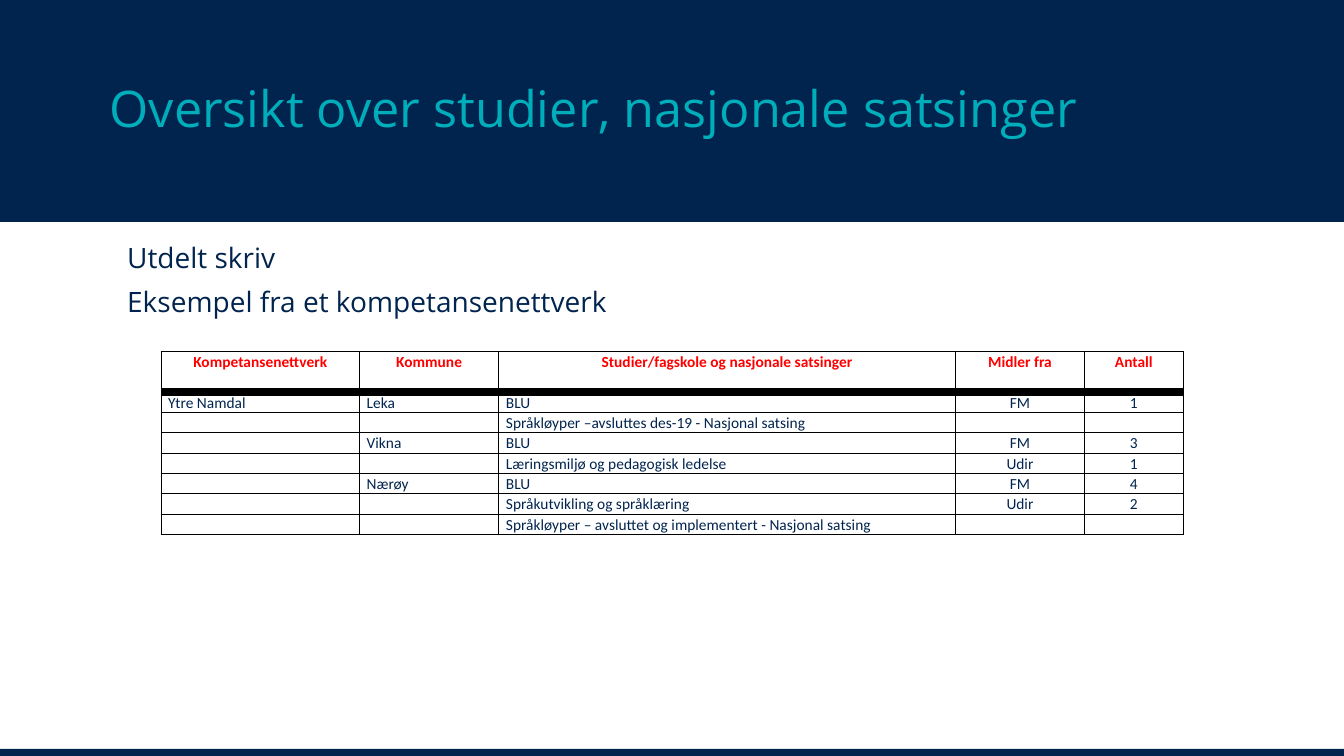
from lxml import etree
from pptx import Presentation
from pptx.dml.color import RGBColor
from pptx.enum.shapes import MSO_SHAPE
from pptx.enum.text import MSO_ANCHOR, MSO_AUTO_SIZE, PP_ALIGN
from pptx.oxml.ns import qn
from pptx.util import Cm, Pt

RECTANGLE = MSO_SHAPE.RECTANGLE
TOP, BOTTOM = MSO_ANCHOR.TOP, MSO_ANCHOR.BOTTOM
LEFT, CENTER = PP_ALIGN.LEFT, PP_ALIGN.CENTER
NO_AUTOFIT = MSO_AUTO_SIZE.NONE

NAVY = RGBColor(0x00, 0x24, 0x4E)
TEAL = RGBColor(0x00, 0xAD, 0xBA)
RED = RGBColor(0xFF, 0x00, 0x00)
BLACK = RGBColor(0x00, 0x00, 0x00)
SLIDE_FONT, TABLE_FONT = "Open Sans", "Calibri"

TITLE = "Oversikt over studier, nasjonale satsinger"
INTRO = ["Utdelt skriv", "Eksempel fra et kompetansenettverk"]
STUDIES = [
    ("Kompetansenettverk", "Kommune", "Studier/fagskole og nasjonale satsinger",
     "Midler fra", "Antall"),
    ("Ytre Namdal", "Leka", "BLU", "FM", "1"),
    ("", "", "Språkløyper –avsluttes des-19 - Nasjonal satsing", "", ""),
    ("", "Vikna", "BLU", "FM", "3"),
    ("", "", "Læringsmiljø og pedagogisk ledelse", "Udir", "1"),
    ("", "Nærøy", "BLU", "FM", "4"),
    ("", "", "Språkutvikling og språklæring", "Udir", "2"),
    ("", "", "Språkløyper – avsluttet og implementert - Nasjonal satsing", "", ""),
]
COLUMN_WIDTHS = [5, 3.51, 11.51, 3.25, 2.49]
CENTERED_COLUMNS = (3, 4)
HEADER_HEIGHT, ROW_HEIGHT = 1.02, 0.51
TABLE_TEXT_SIZE = 11
THIN, THICK = Pt(1), Pt(6)
SLIDE_WIDTH, SLIDE_HEIGHT = 33.87, 19.05
BANDS = [(0, 5.59), (18.87, 0.18)]  # top, height


def place(shape, left, top, width, height):
    shape.left, shape.top = Cm(left), Cm(top)
    shape.width, shape.height = Cm(width), Cm(height)


def style(paragraph, font_name, size, color, bold=False):
    for run in paragraph.runs:
        run.font.name = font_name
        run.font.size = Pt(size)
        run.font.color.rgb = color
        run.font.bold = bold


def add_band(slide, top, height):
    """Add a full-width navy band behind the text."""
    band = slide.shapes.add_shape(
        RECTANGLE, 0, Cm(top), Cm(SLIDE_WIDTH), Cm(height))
    band.shadow.inherit = False
    band.fill.solid()
    band.fill.fore_color.rgb = NAVY
    band.line.fill.background()
    band._element.getparent().insert(2, band._element)


def set_borders(cell, top, bottom):
    properties = cell._tc.get_or_add_tcPr()
    edges = {"a:lnL": THIN, "a:lnR": THIN, "a:lnT": top, "a:lnB": bottom}
    for position, (edge, width) in enumerate(edges.items()):
        line = etree.Element(qn(edge), w=str(width))
        fill = etree.SubElement(line, qn("a:solidFill"))
        etree.SubElement(fill, qn("a:srgbClr"), val=str(BLACK))
        properties.insert(position, line)


def fill_cell(cell, text, row, column):
    is_header = row == 0
    cell.margin_left = cell.margin_right = Cm(0.18)
    cell.margin_top = cell.margin_bottom = 0
    cell.vertical_anchor = TOP
    cell.fill.background()
    set_borders(cell, THICK if row == 1 else THIN, THICK if is_header else THIN)
    paragraph = cell.text_frame.paragraphs[0]
    paragraph.text = text
    paragraph.alignment = CENTER if is_header or column in CENTERED_COLUMNS else LEFT
    paragraph.line_spacing = 1.07
    style(paragraph, TABLE_FONT, TABLE_TEXT_SIZE, RED if is_header else NAVY, is_header)
    if not text:  # keeps an empty row as low as the others
        etree.SubElement(paragraph._p, qn("a:endParaRPr"), sz=str(TABLE_TEXT_SIZE * 100))


def add_studies(slide):
    graphic = slide.shapes.add_table(
        len(STUDIES), len(COLUMN_WIDTHS), Cm(4.06), Cm(8.86),
        Cm(sum(COLUMN_WIDTHS)), Cm(HEADER_HEIGHT + ROW_HEIGHT * (len(STUDIES) - 1)))
    studies = graphic.table
    studies.first_row = studies.horz_banding = False
    for column, width in zip(studies.columns, COLUMN_WIDTHS):
        column.width = Cm(width)
    for row, texts in enumerate(STUDIES):
        studies.rows[row].height = Cm(ROW_HEIGHT if row else HEADER_HEIGHT)
        for column, text in enumerate(texts):
            fill_cell(studies.cell(row, column), text, row, column)


def main():
    deck = Presentation()
    deck.slide_width, deck.slide_height = Cm(SLIDE_WIDTH), Cm(SLIDE_HEIGHT)
    slide = deck.slides.add_slide(deck.slide_layouts[1])
    for top, height in BANDS:
        add_band(slide, top, height)

    title = slide.shapes.title
    place(title, 2.51, 0.61, 28, 3)
    title.text_frame.text = TITLE
    title.text_frame.auto_size = NO_AUTOFIT
    title.text_frame.vertical_anchor = BOTTOM
    heading = title.text_frame.paragraphs[0]
    heading.alignment = LEFT
    heading.line_spacing = 0.9
    style(heading, SLIDE_FONT, 36, TEAL)

    intro = slide.placeholders[1]
    place(intro, 2.95, 6.02, 13.59, 2.49)
    intro.text_frame.text = "\n".join(INTRO)
    intro.text_frame.auto_size = NO_AUTOFIT
    for index, paragraph in enumerate(intro.text_frame.paragraphs):
        properties = paragraph._p.get_or_add_pPr()
        properties.set("marL", "0")
        properties.set("indent", "0")
        etree.SubElement(properties, qn("a:buNone"))
        paragraph.line_spacing = 0.9
        paragraph.space_before = Pt(10 if index else 0)
        style(paragraph, SLIDE_FONT, 20, NAVY)

    add_studies(slide)
    deck.save("out.pptx")


if __name__ == "__main__":
    main()
